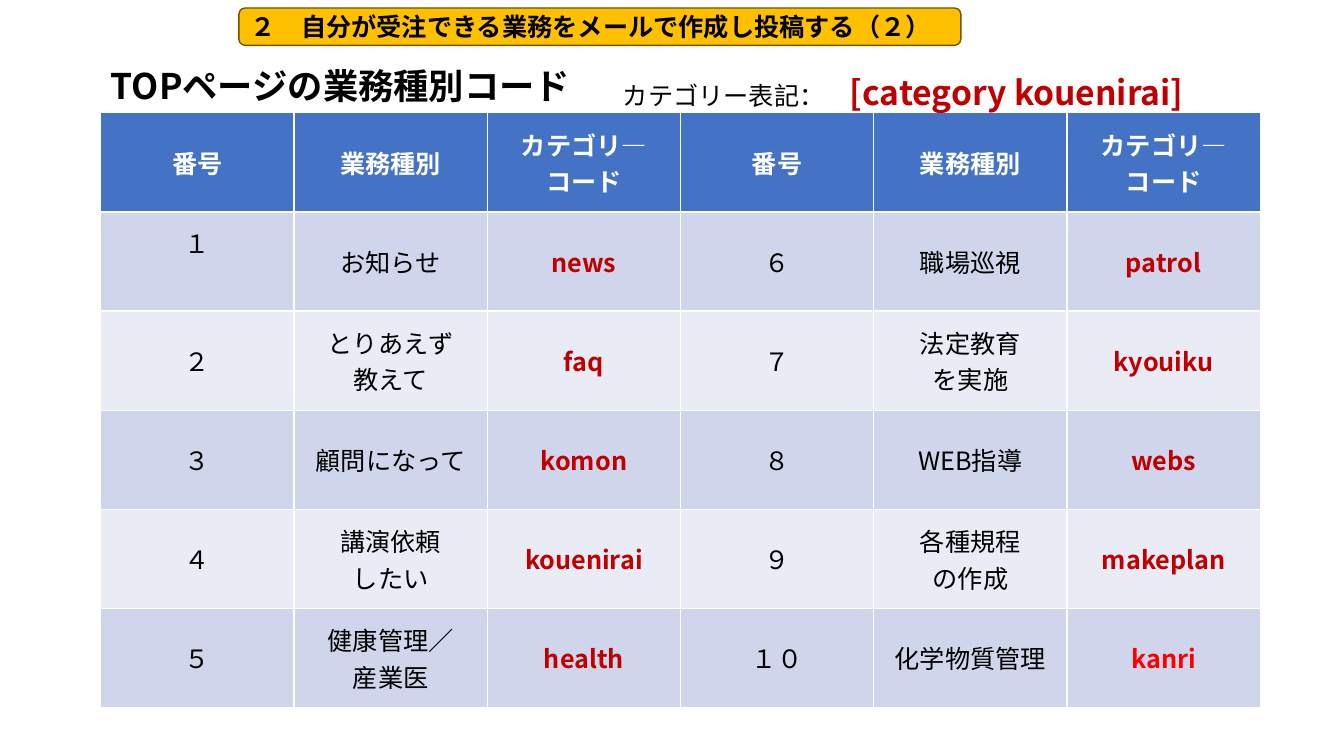
"""Builds the slide listing the category code of each kind of work."""
from dataclasses import dataclass

from lxml.etree import SubElement
from pptx import Presentation
from pptx.dml.color import RGBColor
from pptx.enum.shapes import MSO_SHAPE
from pptx.enum.text import MSO_ANCHOR, PP_ALIGN
from pptx.oxml.ns import qn
from pptx.util import Inches, Pt


@dataclass(frozen=True)
class Theme:
    font: str = "Noto Sans CJK JP"
    black: str = "000000"
    white: str = "FFFFFF"
    code: str = "C00000"
    code_alert: str = "FF0000"
    header: str = "4472C4"
    bands: tuple = ("CFD5EA", "E9EBF5")
    banner: str = "FFC000"
    banner_line: str = "705400"
    title_size: float = 25.2
    example_size: float = 24
    text_size: float = 18


class SlideBuilder:
    def __init__(self, slide, theme):
        self.slide = slide
        self.theme = theme

    def style(self, paragraph, color, size=None, bold=False, align=PP_ALIGN.LEFT):
        paragraph.alignment = align
        font = paragraph.font
        font.size = Pt(size or self.theme.text_size)
        font.bold = bold
        font.color.rgb = RGBColor.from_string(color)
        font.name = self.theme.font
        defaults = paragraph._p.pPr.find(qn("a:defRPr"))
        SubElement(defaults, qn("a:ea")).set("typeface", self.theme.font)

    def title(self, text, left, top, width, height):
        heading = self.slide.shapes.title
        heading.left, heading.top = Inches(left), Inches(top)
        heading.width, heading.height = Inches(width), Inches(height)
        frame = heading.text_frame
        frame.text = text
        frame.vertical_anchor = MSO_ANCHOR.MIDDLE
        frame.paragraphs[0].line_spacing = 0.9
        self.style(frame.paragraphs[0], self.theme.black, self.theme.title_size, True)

    def notation(self, label, example, left, top, width, height):
        box = self.slide.shapes.add_textbox(
            Inches(left), Inches(top), Inches(width), Inches(height))
        box.text_frame.word_wrap = True
        line = box.text_frame.paragraphs[0]
        line.add_run().text = label
        self.style(line, self.theme.black)
        example_run = line.add_run()
        example_run.text = example
        example_run.font.size = Pt(self.theme.example_size)
        example_run.font.bold = True
        example_run.font.color.rgb = RGBColor.from_string(self.theme.code)

    def banner(self, text, left, top, width, height):
        band = self.slide.shapes.add_shape(
            MSO_SHAPE.FLOWCHART_ALTERNATE_PROCESS,
            Inches(left), Inches(top), Inches(width), Inches(height))
        band.shadow.inherit = False
        band.fill.solid()
        band.fill.fore_color.rgb = RGBColor.from_string(self.theme.banner)
        band.line.color.rgb = RGBColor.from_string(self.theme.banner_line)
        band.line.width = Pt(1)
        band.text_frame.text = text
        band.text_frame.vertical_anchor = MSO_ANCHOR.MIDDLE
        self.style(band.text_frame.paragraphs[0], self.theme.black, bold=True)

    def cell(self, cell, text, fill, color, bold):
        cell.text = text
        cell.vertical_anchor = MSO_ANCHOR.MIDDLE
        cell.fill.solid()
        cell.fill.fore_color.rgb = RGBColor.from_string(fill)
        for paragraph in cell.text_frame.paragraphs:
            self.style(paragraph, color, bold=bold, align=PP_ALIGN.CENTER)

    def code_table(self, headings, rows, left, top, width, height):
        theme = self.theme
        table = self.slide.shapes.add_table(
            len(rows) + 1, len(headings),
            Inches(left), Inches(top), Inches(width), Inches(height)).table
        for column, heading in enumerate(headings):
            self.cell(table.cell(0, column), heading, theme.header, theme.white, True)
        for number, row in enumerate(rows):
            for column, text in enumerate(row):
                is_code = column % 3 == 2
                color = theme.code if is_code else theme.black
                if text == "kanri":
                    color = theme.code_alert
                self.cell(table.cell(number + 1, column), text,
                          theme.bands[number % 2], color, is_code)
        table.cell(1, 0).margin_bottom = Inches(0.42)


HEADINGS = ("番号", "業務種別", "カテゴリ―コード") * 2
CODES = (
    ("１", "お知らせ", "news", "６", "職場巡視", "patrol"),
    ("２", "とりあえず\n教えて", "faq", "７", "法定教育\nを実施", "kyouiku"),
    ("３", "顧問になって", "komon", "８", "WEB指導", "webs"),
    ("４", "講演依頼\nしたい", "kouenirai", "９", "各種規程\nの作成", "makeplan"),
    ("５", "健康管理／\n産業医", "health", "１０", "化学物質管理", "kanri"),
)


def main():
    deck = Presentation()
    deck.slide_width, deck.slide_height = Inches(13.33), Inches(7.5)
    slide = deck.slides.add_slide(deck.slide_layouts[5])
    builder = SlideBuilder(slide, Theme())
    builder.title("TOPページの業務種別コード", 1, 0.67, 5.83, 0.4)
    builder.code_table(HEADINGS, CODES, 1, 1.12, 11.5, 5.9)
    builder.notation("カテゴリー表記：　", "[category kouenirai]", 6.08, 0.66, 5.83, 0.5)
    builder.banner("２　自分が受注できる業務をメールで作成し投稿する（２）", 2.37, 0.08, 7.16, 0.37)
    deck.save("out.pptx")


if __name__ == "__main__":
    main()
